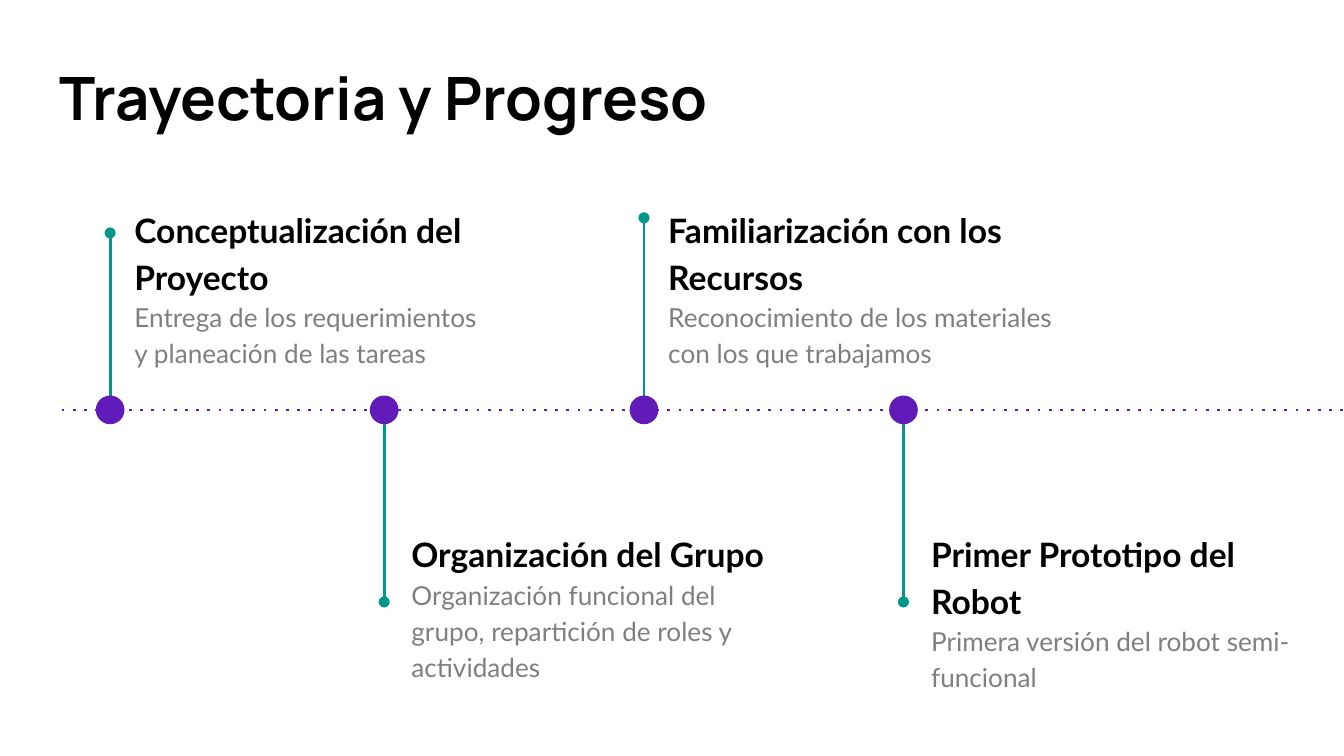
import dataclasses

import pptx
import pptx.dml.color
import pptx.enum.shapes
import pptx.enum.text
import pptx.oxml.ns
import pptx.util
from lxml import etree

Pt = pptx.util.Pt
qn = pptx.oxml.ns.qn


@dataclasses.dataclass(frozen=True)
class Theme:
    ink: str = "000000"
    grey: str = "7F7F7F"
    dot: str = "611BB8"
    stem: str = "009688"
    head: str = "Manrope"
    body: str = "Lato"
    title: float = 32
    name: float = 18
    note: float = 14
    line: float = 1.5


THEME = Theme()
DOT = 15.4

STEPS = [
    ((64.8, 102.2, 206, 103), 5.8, -87.1, 16, "Conceptualización del Proyecto",
     "Entrega de los requerimientos y planeación de las tareas"),
    ((213.2, 275.8, 209.5, 76.3), 7.4, 95.2, 0, "Organización del Grupo",
     "Organización funcional del grupo, repartición de roles y actividades"),
    ((350.8, 102.2, 230.4, 76.3), 5.8, -95.2, 0, "Familiarización con los Recursos",
     "Reconocimiento de los materiales con los que trabajamos"),
    ((491.6, 275.8, 209.5, 76.3), 7.6, 95.2, 0, "Primer Prototipo del Robot",
     "Primera versión del robot semi-funcional"),
]


def paint(color):
    return pptx.dml.color.RGBColor.from_string(color)


def place(holder, box):
    holder.left, holder.top, holder.width, holder.height = map(Pt, box)
    frame = holder.text_frame
    frame.word_wrap = True
    frame.auto_size = pptx.enum.text.MSO_AUTO_SIZE.NONE
    frame.vertical_anchor = pptx.enum.text.MSO_ANCHOR.TOP
    frame.margin_left = frame.margin_right = Pt(7.2)
    frame.margin_top = frame.margin_bottom = Pt(7.2)
    return frame


def write(para, text, font, size, color, bold=False, space=1, after=0):
    para.alignment = pptx.enum.text.PP_ALIGN.LEFT
    para.line_spacing = space
    para.space_before, para.space_after = Pt(0), Pt(after)
    props = para._p.get_or_add_pPr()
    props.set("marL", "0")
    props.set("indent", "0")
    etree.SubElement(props, qn("a:buNone"))
    run = para.add_run()
    run.text = text
    run.font.name, run.font.size, run.font.bold = font, Pt(size), bold
    run.font.color.rgb = paint(color)


def draw_line(slide, start, end, color, dash=None, tail=None):
    line = slide.shapes.add_connector(
        pptx.enum.shapes.MSO_CONNECTOR.STRAIGHT, *map(Pt, (*start, *end)))
    line.line.color.rgb = paint(color)
    line.line.width = Pt(THEME.line)
    props = line._element.spPr
    for tag, kind, value in (("a:prstDash", "val", dash), ("a:tailEnd", "type", tail)):
        if value:
            etree.SubElement(props.find(qn("a:ln")), qn(tag)).set(kind, value)
    etree.SubElement(props, qn("a:effectLst"))


def add_title(slide, box):
    frame = place(slide.shapes.title, box)
    write(frame.paragraphs[0], "Trayectoria y Progreso", font=THEME.head,
          size=THEME.title, color=THEME.ink, bold=True)


def add_step(slide, holder, box, axis, step):
    gap, stem, after, name, note = step
    x = box[0] - gap
    side = DOT / 2 if stem > 0 else -DOT / 2
    draw_line(slide, (x, axis + side), (x, axis + side + stem), THEME.stem, tail="oval")
    dot = slide.shapes.add_shape(
        pptx.enum.shapes.MSO_SHAPE.OVAL,
        *map(Pt, (x - DOT / 2, axis - DOT / 2, DOT, DOT)))
    dot.shadow.inherit = False
    dot.fill.solid()
    dot.fill.fore_color.rgb = paint(THEME.dot)
    dot.line.fill.background()
    frame = place(holder, box)
    write(frame.paragraphs[0], name, font=THEME.body, size=THEME.name,
          color=THEME.ink, bold=True, space=1.15)
    write(frame.add_paragraph(), note, font=THEME.body, size=THEME.note,
          color=THEME.grey, space=1.15, after=after)


def add_track(slide, box):
    left, axis, width, _ = box
    draw_line(slide, (left, axis), (left + width, axis), THEME.dot, dash="dot")
    holders = [item for item in slide.placeholders if item.placeholder_format.idx]
    for holder, (area, *step) in zip(holders, STEPS):
        add_step(slide, holder, area, axis, step)


def main():
    deck = pptx.Presentation()
    deck.slide_width, deck.slide_height = Pt(720), Pt(405)
    slide = deck.slides.add_slide(deck.slide_layouts.get_by_name("Comparison"))
    add_title(slide, (24.5, 25.2, 671, 49))
    add_track(slide, (33, 219.6, 688.5, 0))
    deck.save("out.pptx")


if __name__ == "__main__":
    main()
